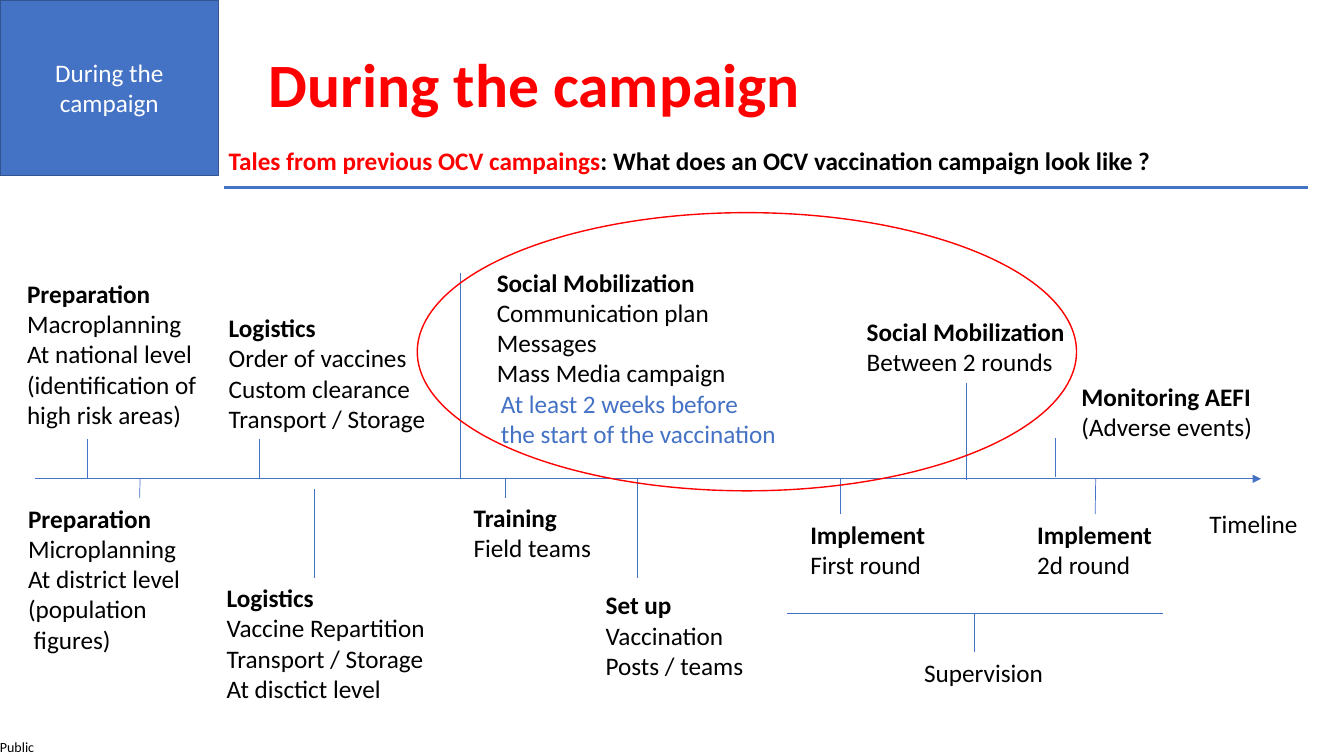
from lxml.etree import SubElement
from pptx import Presentation
from pptx.dml.color import RGBColor
from pptx.enum.shapes import MSO_CONNECTOR, MSO_SHAPE
from pptx.enum.text import MSO_ANCHOR, MSO_AUTO_SIZE, PP_ALIGN
from pptx.oxml.ns import qn
from pptx.util import Inches, Pt

BLUE = RGBColor(0x44, 0x72, 0xC4)
DARK_BLUE = RGBColor(0x32, 0x54, 0x91)
RED = RGBColor(0xFF, 0x00, 0x00)
BLACK = RGBColor(0x00, 0x00, 0x00)
WHITE = RGBColor(0xFF, 0xFF, 0xFF)

COLUMNS, ROWS = 133.33, 75  # grid cells across and down the slide
AXIS = 47.5  # row of the timeline


class TimelineSlide:
    font_name = "Calibri"
    body_size = 18

    def __init__(self, deck):
        self.page = deck.slides.add_slide(deck.slide_layouts[6])
        self.cell_width = deck.slide_width / COLUMNS
        self.cell_height = deck.slide_height / ROWS

    def x(self, columns):
        return round(columns * self.cell_width)

    def y(self, rows):
        return round(rows * self.cell_height)

    def area(self, left, top, width, height):
        return self.x(left), self.y(top), self.x(width), self.y(height)

    def fill_text(self, frame, lines, size=None, **paragraph_format):
        """Each line is a list of (text, colour, bold) spans."""
        for number, spans in enumerate(lines):
            para = frame.paragraphs[0] if number == 0 else frame.add_paragraph()
            for name, value in paragraph_format.items():
                setattr(para, name, value)
            for text, colour, bold in spans:
                span = para.add_run()
                span.text = text
                values = {"name": self.font_name, "size": Pt(size or self.body_size), "bold": bold}
                for name, value in values.items():
                    setattr(span.font, name, value)
                span.font.color.rgb = colour

    def text(self, place, lines, size=None, frame_format=None, **paragraph_format):
        box = self.page.shapes.add_textbox(*self.area(*place))
        values = {"word_wrap": True, "auto_size": MSO_AUTO_SIZE.SHAPE_TO_FIT_TEXT}
        for name, value in (values | (frame_format or {})).items():
            setattr(box.text_frame, name, value)
        self.fill_text(box.text_frame, lines, size, **paragraph_format)
        return box

    def stage(self, place, heading, details, wrap=False):
        lines = [[(heading, BLACK, True)]] if heading else []
        lines += [[(detail, BLACK, False)] for detail in details]
        return self.text(place, lines, frame_format={"word_wrap": wrap})

    def shape(self, kind, place, outline, fill=None):
        shape = self.page.shapes.add_shape(kind, *self.area(*place))
        shape.shadow.inherit = False
        if fill is None:
            shape.fill.background()
        else:
            shape.fill.solid()
            shape.fill.fore_color.rgb = fill
        shape.line.color.rgb = outline
        shape.line.width = Pt(1)
        return shape

    def line(self, start, end, width=0.5, arrow=False):
        line = self.page.shapes.add_connector(
            MSO_CONNECTOR.STRAIGHT,
            self.x(start[0]), self.y(start[1]), self.x(end[0]), self.y(end[1]))
        line.line.color.rgb = BLUE
        line.line.width = Pt(width)
        properties = line._element.spPr
        if arrow:
            SubElement(properties.find(qn("a:ln")), qn("a:tailEnd"), type="triangle")
        SubElement(properties, qn("a:effectLst"))
        return line

    def tick(self, column, top, bottom):
        return self.line((column, top), (column, bottom))


def main():
    deck = Presentation()
    deck.slide_width, deck.slide_height = Inches(13.33), Inches(7.5)
    slide = TimelineSlide(deck)

    # Footer, corner block and headings
    no_margins = dict.fromkeys(("margin_left", "margin_top", "margin_right", "margin_bottom"), 0)
    slide.text((0, 73.3, 3.7, 1.7), [[("Public", BLACK, False)]], 10,
               no_margins | {"word_wrap": False})
    corner = slide.shape(MSO_SHAPE.RECTANGLE, (0, 0, 21.7, 17.4), DARK_BLUE, BLUE)
    corner.text_frame.vertical_anchor = MSO_ANCHOR.MIDDLE
    slide.fill_text(corner.text_frame, [[("During the campaign", WHITE, False)]],
                    alignment=PP_ALIGN.CENTER)
    slide.text((21.7, 13.9, 111, 4), [[
        ("Tales from previous OCV campaings", RED, True),
        (": What does an OCV vaccination campaign look like ?", BLACK, True)]])
    slide.text((25.7, 1.4, 104.7, 14.5), [[("During the campaign", RED, True)]], 44,
               {"vertical_anchor": MSO_ANCHOR.MIDDLE, "auto_size": MSO_AUTO_SIZE.NONE},
               line_spacing=0.9)
    slide.line((22.2, 18.6), (129.8, 18.6), 1.5)

    # Stages above the timeline
    slide.stage((1.7, 27.1, 21.1, 16.2), "Preparation",
                ["Macroplanning", "At national level", "(identification of high risk areas)"], True)
    slide.stage((21.7, 30.5, 22.2, 13.1), "Logistics",
                ["Order of vaccines", "Custom clearance", "Transport / Storage"])
    slide.stage((48.3, 26, 25, 13.1), "Social Mobilization",
                ["Communication plan", "Messages", "Mass Media campaign"])
    slide.text((48.7, 38, 66.8, 7.1), [[("At least 2 weeks before", BLUE, False)],
                                       [("the start of the vaccination", BLUE, False)]])
    between_rounds = slide.stage((85, 30.9, 21.8, 7.1), "Social Mobilization",
                                 ["Between 2 rounds"])
    slide.stage((106.3, 37.3, 19.1, 7.1), "Monitoring AEFI", ["(Adverse events)"])

    # Stages below the timeline
    microplanning = slide.stage(
        (1.8, 49.4, 24.1, 16.2), "Preparation",
        ["Microplanning", "At district level", "(population", " figures)"], True)
    slide.stage((21.5, 57.3, 21.7, 13.1), "Logistics",
                ["Vaccine Repartition", "Transport / Storage", "At disctict level"])
    slide.stage((46, 49.3, 14, 7.1), "Training", ["Field teams"])
    slide.stage((59.1, 58, 15.8, 10.1), "Set up", ["Vaccination", "Posts / teams"])
    slide.stage((79.4, 51, 13.5, 7.1), "Implement", ["First round"])
    second_round = slide.stage((101.9, 51, 13.5, 7.1), "Implement", ["2d round"])
    slide.stage((90.7, 64.7, 13.9, 4), None, ["Supervision"])
    slide.stage((119, 49.9, 10.9, 4), None, ["Timeline"])

    # Timeline, supervision bar and ticks
    slide.line((3.5, AXIS), (125.1, AXIS), arrow=True)
    slide.line((78.1, 60.9), (115.4, 60.9))
    for column, top, bottom in (
            (8.7, 43.6, AXIS), (25.7, 43.6, AXIS), (45.7, 27.1, AXIS), (104.7, 43.5, 47.3),
            (31.2, 48.5, 57.3), (50.1, AXIS, 49.4), (63.2, AXIS, 57.3), (83.4, AXIS, 51),
            (96.7, 60.9, 64.7)):
        slide.tick(column, top, bottom)
    slide.tick(13.9, AXIS, 49.4).end_connect(microplanning, 0)
    slide.tick(108.7, AXIS, 51).end_connect(second_round, 0)
    slide.tick(95.9, 38.3, 47.6).begin_connect(between_rounds, 2)

    # Highlight around social mobilization
    slide.shape(MSO_SHAPE.OVAL, (41.4, 21.1, 65.4, 27.6), RED)

    deck.save("out.pptx")


if __name__ == "__main__":
    main()
